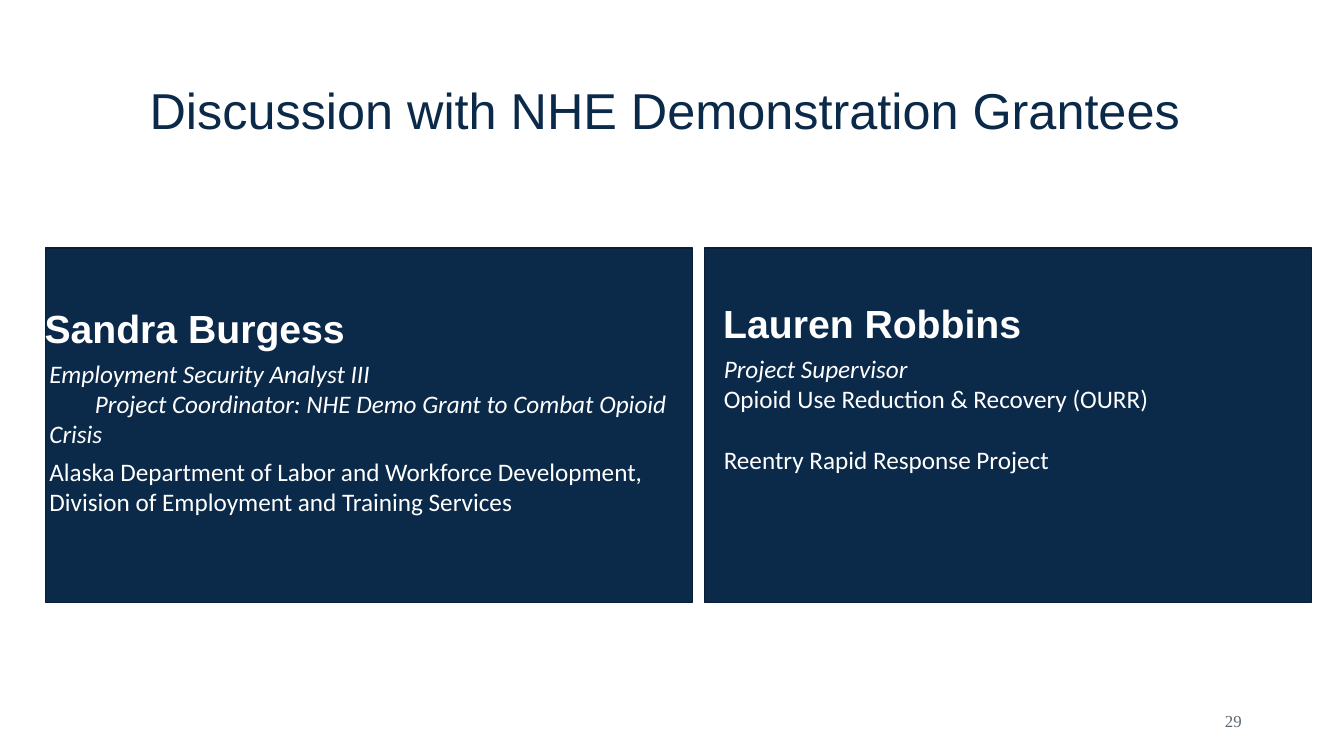
from dataclasses import dataclass

from pptx import Presentation
from pptx.dml.color import RGBColor
from pptx.enum.shapes import MSO_SHAPE
from pptx.enum.text import MSO_ANCHOR, PP_ALIGN
from pptx.slide import Slide
from pptx.text.text import TextFrame
from pptx.util import Pt

RECTANGLE = MSO_SHAPE.RECTANGLE
TOP, MIDDLE = MSO_ANCHOR.TOP, MSO_ANCHOR.MIDDLE
LEFT, CENTER, RIGHT = PP_ALIGN.LEFT, PP_ALIGN.CENTER, PP_ALIGN.RIGHT

NAVY, DARK_NAVY, WHITE, GRAY = "0B2949", "081E36", "FFFFFF", "5B6771"
PANEL_TOP, PANEL_HEIGHT = 177.1, 253.4


@dataclass(frozen=True)
class Detail:
    text: str
    italic: bool = False
    before: float = 0
    indent: float = 0


@dataclass(frozen=True)
class Grantee:
    name: str
    details: tuple[Detail, ...]
    panel_left: float
    panel_width: float
    name_left: float
    detail_left: float
    text_top: float


GRANTEES = (
    Grantee(
        "Sandra Burgess",
        (
            Detail("Employment Security Analyst III", italic=True, before=5),
            Detail("Project Coordinator: NHE Demo Grant to Combat Opioid Crisis",
                   italic=True, indent=32.5),
            Detail("Alaska Department of Labor and Workforce Development, "
                   "Division of Employment and Training Services", before=5),
        ),
        panel_left=32.4, panel_width=462.2,
        name_left=31.8, detail_left=35.3, text_top=217.3,
    ),
    Grantee(
        "Lauren Robbins",
        (
            Detail("Project Supervisor", italic=True, before=5),
            Detail("Opioid Use Reduction & Recovery (OURR)"),
            Detail("Reentry Rapid Response Project", before=22),
        ),
        panel_left=503.3, panel_width=433.4,
        name_left=516.6, detail_left=517, text_top=213.8,
    ),
)


def color(value: str) -> RGBColor:
    return RGBColor.from_string(value)


def add_frame(slide: Slide, left: float, top: float, width: float,
              height: float, anchor: MSO_ANCHOR = TOP) -> TextFrame:
    box = slide.shapes.add_textbox(Pt(left), Pt(top), Pt(width), Pt(height))
    frame = box.text_frame
    frame.word_wrap = True
    frame.vertical_anchor = anchor
    frame.margin_left = frame.margin_right = 0
    frame.margin_top = frame.margin_bottom = 0
    return frame


def add_text(frame: TextFrame, text: str, *, size: float, font: str = "Calibri",
             fill: str = WHITE, bold: bool = False, italic: bool = False,
             align: PP_ALIGN = LEFT, before: float = 0, spacing: float = 1.0,
             margin: float = 0, indent: float = 0) -> None:
    paragraph = frame.paragraphs[0]
    if paragraph.runs:
        paragraph = frame.add_paragraph()
    paragraph.alignment = align
    paragraph.space_before = Pt(before)
    paragraph.line_spacing = spacing
    properties = paragraph._p.get_or_add_pPr()
    properties.set("marL", str(Pt(margin)))
    properties.set("indent", str(Pt(indent)))
    run = paragraph.add_run()
    run.text = text
    run.font.name = font
    run.font.size = Pt(size)
    run.font.bold = bold
    run.font.italic = italic
    run.font.color.rgb = color(fill)


def add_grantee(slide: Slide, grantee: Grantee) -> None:
    panel = slide.shapes.add_shape(
        RECTANGLE, Pt(grantee.panel_left), Pt(PANEL_TOP),
        Pt(grantee.panel_width), Pt(PANEL_HEIGHT))
    panel.shadow.inherit = False
    panel.fill.solid()
    panel.fill.fore_color.rgb = color(NAVY)
    panel.line.color.rgb = color(DARK_NAVY)
    panel.line.width = Pt(1)

    text_right = grantee.panel_left + grantee.panel_width - 7.2
    frame = add_frame(slide, grantee.name_left, grantee.text_top,
                      text_right - grantee.name_left, 180)
    add_text(frame, grantee.name, size=28, font="Arial", bold=True)
    for detail in grantee.details:
        add_text(frame, detail.text, size=18, italic=detail.italic,
                 before=detail.before, indent=detail.indent,
                 margin=grantee.detail_left - grantee.name_left)


def main() -> None:
    presentation = Presentation()
    presentation.slide_width = Pt(960)
    presentation.slide_height = Pt(540)
    slide = presentation.slides.add_slide(presentation.slide_layouts[6])

    title = add_frame(slide, 61, 28.8, 828, 104.4, MIDDLE)
    add_text(title, "Discussion with NHE Demonstration Grantees", size=36,
             font="Arial", fill=NAVY, align=CENTER, spacing=0.9)
    for grantee in GRANTEES:
        add_grantee(slide, grantee)
    page_number = add_frame(slide, 678.2, 500.4, 208.8, 28.8, MIDDLE)
    add_text(page_number, "29", size=12, font="Times New Roman", fill=GRAY,
             align=RIGHT)

    presentation.save("out.pptx")


if __name__ == "__main__":
    main()
